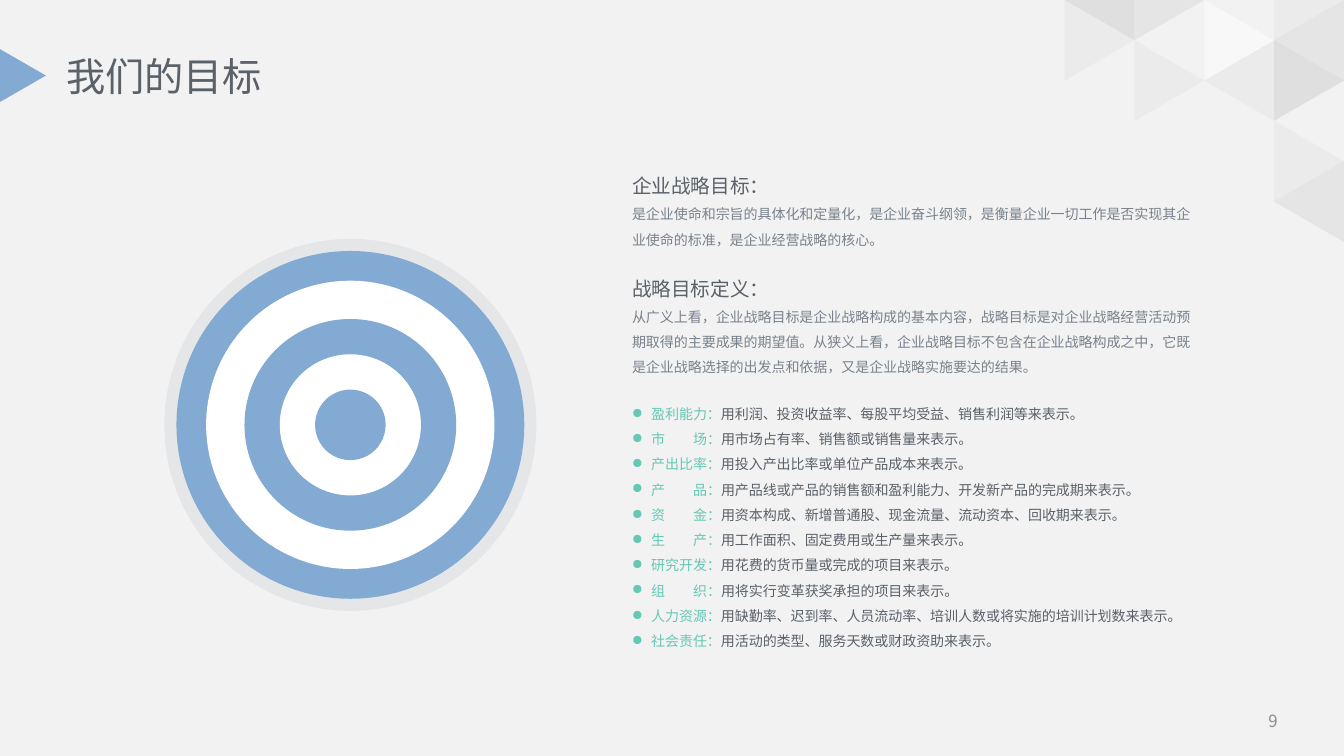
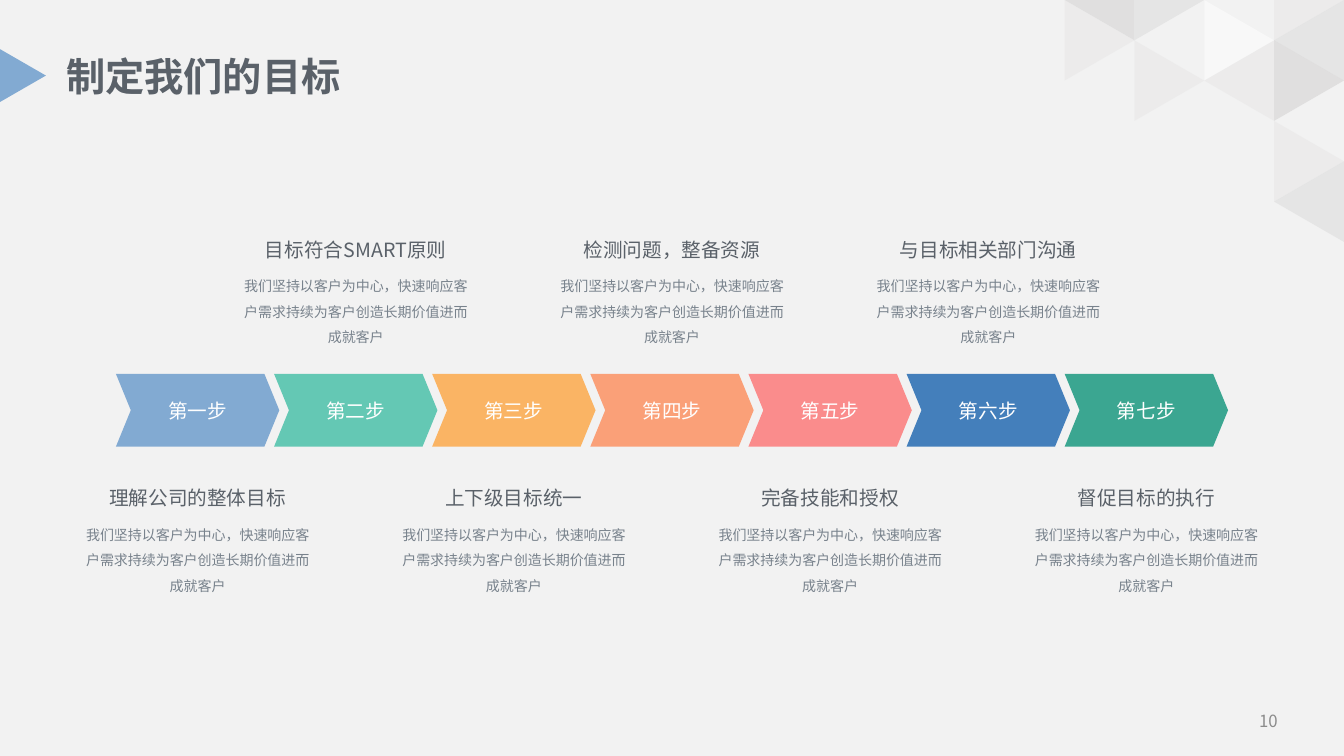
import math
from dataclasses import dataclass

import lxml.etree
import pptx
import pptx.dml.color
import pptx.enum.shapes
import pptx.enum.text
import pptx.oxml.ns
import pptx.util

Inches = pptx.util.Inches
Shape = pptx.enum.shapes.MSO_SHAPE
Align = pptx.enum.text.PP_ALIGN
Anchor = pptx.enum.text.MSO_ANCHOR
qn = pptx.oxml.ns.qn


@dataclass(frozen=True)
class Theme:
    """Colours, font and type sizes of the presentation."""
    font: str = "Noto Sans CJK SC"
    background: str = "F2F2F2"
    dark: str = "5A6169"
    body: str = "78828C"
    muted: str = "8C8C8C"
    white: str = "FFFFFF"
    halo: str = "E4E6E8"
    blue: str = "82AAD2"
    green: str = "64C8B4"
    steps: tuple = ("82AAD2", "64C8B4", "FAB464", "FAA078", "FA8C8C", "447FBB", "3BA691")
    title_size: int = 28
    heading_size: int = 14
    page_size: int = 12
    body_size: int = 10


@dataclass(frozen=True)
class Box:
    """A rectangle in inches."""
    left: float
    top: float
    width: float
    height: float

    def lengths(self):
        """Return the four sides as lengths."""
        return [Inches(side) for side in (self.left, self.top, self.width, self.height)]


THEME = Theme()
SLIDE_WIDTH, SLIDE_HEIGHT = 13.33, 7.5

MOSAIC = (
    (0, 0, "D0CECE"), (1, 0, "D9D9D9"), (2, 0, "F2F2F2"), (3, 0, "E7E6E6"),
    (0, 1, "E7E6E6"), (1, 1, "F2F2F2"), (2, 1, "FFFFFF"), (3, 1, "D9D9D9"),
    (1, 2, "E7E6E6"), (2, 2, "E7E6E6"), (3, 2, "D0CECE"),
    (2, 3, "F2F2F2"), (3, 3, "F2F2F2"),
    (2, 4, "F2F2F2"), (3, 4, "E7E6E6"), (3, 5, "D9D9D9"),
)

RINGS = (
    (3.69, THEME.halo), (3.45, THEME.blue), (2.86, THEME.white),
    (2.1, THEME.blue), (1.4, THEME.white), (0.7, THEME.blue),
)

DEFINITIONS = (
    ("企业战略目标：",
     "是企业使命和宗旨的具体化和定量化，是企业奋斗纲领，是衡量企业一切工作是否实现其企业使命的标准，是企业经营战略的核心。"),
    ("战略目标定义：",
     "从广义上看，企业战略目标是企业战略构成的基本内容，战略目标是对企业战略经营活动预期取得的主要成果的期望值。"
     "从狭义上看，企业战略目标不包含在企业战略构成之中，它既是企业战略选择的出发点和依据，又是企业战略实施要达的结果。"),
)

MEASURES = (
    ("盈利能力", "用利润、投资收益率、每股平均受益、销售利润等来表示。"),
    ("市场", "用市场占有率、销售额或销售量来表示。"),
    ("产出比率", "用投入产出比率或单位产品成本来表示。"),
    ("产品", "用产品线或产品的销售额和盈利能力、开发新产品的完成期来表示。"),
    ("资金", "用资本构成、新增普通股、现金流量、流动资本、回收期来表示。"),
    ("生产", "用工作面积、固定费用或生产量来表示。"),
    ("研究开发", "用花费的货币量或完成的项目来表示。"),
    ("组织", "用将实行变革获奖承担的项目来表示。"),
    ("人力资源", "用缺勤率、迟到率、人员流动率、培训人数或将实施的培训计划数来表示。"),
    ("社会责任", "用活动的类型、服务天数或财政资助来表示。"),
)

STEPS = (
    ("第一步", "理解公司的整体目标"),
    ("第二步", "目标符合SMART原则"),
    ("第三步", "上下级目标统一"),
    ("第四步", "检测问题，整备资源"),
    ("第五步", "完备技能和授权"),
    ("第六步", "与目标相关部门沟通"),
    ("第七步", "督促目标的执行"),
)
STEP_NOTE = "我们坚持以客户为中心，快速响应客户需求持续为客户创造长期价值进而成就客户"


def write(paragraph, text, size=THEME.body_size, color=THEME.body, bold=False, spacing=0):
    """Add a formatted run to a paragraph."""
    run = paragraph.add_run()
    run.text = text
    run.font.size = pptx.util.Pt(size)
    run.font.bold = bold
    run.font.name = THEME.font
    run.font.color.rgb = pptx.dml.color.RGBColor.from_string(color)
    properties = run.font._element
    properties.set("lang", "zh-CN")
    if spacing:
        properties.set("spc", str(spacing * 100))
    east_asian = lxml.etree.SubElement(properties, qn("a:ea"))
    east_asian.set("typeface", THEME.font)


def next_paragraph(frame, align=Align.LEFT, line_spacing=None, after=0):
    """Return a fresh paragraph, using the empty first one if it is free."""
    first = frame.paragraphs[0]
    paragraph = frame.add_paragraph() if first.runs else first
    paragraph.alignment = align
    paragraph.line_spacing = line_spacing
    paragraph.space_after = pptx.util.Pt(after)
    return paragraph


def add_text_frame(slide, box, anchor=Anchor.TOP):
    """Add a wrapping text box and return its text frame."""
    frame = slide.shapes.add_textbox(*box.lengths()).text_frame
    frame.word_wrap = True
    frame.vertical_anchor = anchor
    return frame


def add_filled(shapes, kind, box, color, rotation=0, opacity=100):
    """Add a flat preset shape without outline."""
    shape = shapes.add_shape(kind, *box.lengths())
    shape.shadow.inherit = False
    shape.line.fill.background()
    shape.fill.solid()
    shape.fill.fore_color.rgb = pptx.dml.color.RGBColor.from_string(color)
    shape.rotation = rotation
    if opacity < 100:
        fill_color = shape._element.spPr.find(qn("a:solidFill")).find(qn("a:srgbClr"))
        alpha = lxml.etree.SubElement(fill_color, qn("a:alpha"))
        alpha.set("val", str(opacity * 1000))
    return shape


def add_mosaic(slide, right, top, side):
    """Tile translucent triangles in the corner that ends at right and top."""
    depth = side * math.sqrt(3) / 2
    columns = 1 + max(column for column, row, color in MOSAIC)
    for column, row, color in MOSAIC:
        center_x = right - (columns - column - 0.5) * depth
        center_y = top + row * side / 2
        box = Box(center_x - side / 2, center_y - depth / 2, side, depth)
        rotation = 90 if (column + row) % 2 else 270
        add_filled(slide.shapes, Shape.ISOSCELES_TRIANGLE, box, color, rotation, 50)


def add_base_slide(presentation, title, page, bold=False):
    """Add a slide with the shared background, corner, title and page number."""
    slide = presentation.slides.add_slide(presentation.slide_layouts[6])
    slide.background.fill.solid()
    slide.background.fill.fore_color.rgb = pptx.dml.color.RGBColor.from_string(THEME.background)
    add_mosaic(slide, SLIDE_WIDTH, 0, 0.8)
    add_filled(slide.shapes, Shape.ISOSCELES_TRIANGLE, Box(-0.04, 0.52, 0.53, 0.46), THEME.blue, 90)
    title_frame = add_text_frame(slide, Box(0.56, 0.4, 12.2, 0.7), Anchor.MIDDLE)
    write(next_paragraph(title_frame), title, size=THEME.title_size, color=THEME.dark, bold=bold)
    page_frame = add_text_frame(slide, Box(12.25, 6.95, 0.52, 0.4), Anchor.MIDDLE)
    write(next_paragraph(page_frame, Align.RIGHT), str(page), size=THEME.page_size, color=THEME.muted)
    return slide


def add_target(slide, box):
    """Draw concentric rings centred in the box."""
    group = slide.shapes.add_group_shape()
    for diameter, color in RINGS:
        left = box.left + (box.width - diameter) / 2
        top = box.top + (box.height - diameter) / 2
        add_filled(group.shapes, Shape.OVAL, Box(left, top, diameter, diameter), color)


def add_definitions(slide, box):
    """Write the headed definitions."""
    frame = add_text_frame(slide, box)
    for heading, body in DEFINITIONS:
        write(next_paragraph(frame, line_spacing=1.5), heading, size=THEME.heading_size, color=THEME.dark)
        write(next_paragraph(frame, line_spacing=1.5, after=12), body)


def add_measures(slide, box):
    """Write the bulleted measures, spreading short labels to four characters."""
    frame = add_text_frame(slide, box)
    indent = Inches(0.19)
    for label, body in MEASURES:
        paragraph = next_paragraph(frame, line_spacing=1.5)
        properties = paragraph._p.get_or_add_pPr()
        properties.set("marL", str(indent))
        properties.set("indent", str(-indent))
        bullet = lxml.etree.SubElement(properties, qn("a:buChar"))
        bullet.set("char", "●")
        missing = 4 - len(label)
        write(paragraph, label[0], color=THEME.green, spacing=missing * THEME.body_size)
        write(paragraph, label[1:] + "：", color=THEME.green)
        write(paragraph, body, color=THEME.dark)


def add_step(slide, box, label, color):
    """Draw one labelled chevron."""
    chevron = add_filled(slide.shapes, Shape.CHEVRON, box, color)
    chevron.adjustments[0] = 0.205
    chevron.text_frame.vertical_anchor = Anchor.MIDDLE
    paragraph = next_paragraph(chevron.text_frame, Align.CENTER)
    write(paragraph, label, size=THEME.heading_size, color=THEME.white)


def add_caption(slide, box, heading):
    """Write a centred heading with its note."""
    frame = add_text_frame(slide, box)
    write(next_paragraph(frame, Align.CENTER, 1.5, 6), heading, size=THEME.heading_size, color=THEME.dark)
    write(next_paragraph(frame, Align.CENTER, 1.5, 6), STEP_NOTE)


def add_process(slide, box):
    """Lay chevrons across the box with captions alternating below and above."""
    step_width, caption_width = 1.62, 2.41
    pitch = (box.width - step_width) / (len(STEPS) - 1)
    for index, ((label, heading), color) in enumerate(zip(STEPS, THEME.steps)):
        left = box.left + index * pitch
        add_step(slide, Box(left, box.top, step_width, box.height), label, color)
        caption_left = left + (step_width - caption_width) / 2
        caption_top = box.top + (-1.52 if index % 2 else 0.95)
        add_caption(slide, Box(caption_left, caption_top, caption_width, 1.3), heading)


def build_goal_slide(presentation):
    """Build the slide that defines the goals."""
    slide = add_base_slide(presentation, "我们的目标", 9)
    add_target(slide, Box(1.63, 2.37, 3.69, 3.69))
    add_definitions(slide, Box(6.17, 1.56, 5.81, 2.24))
    add_measures(slide, Box(6.17, 3.89, 5.9, 2.6))


def build_process_slide(presentation):
    """Build the slide with the seven steps."""
    slide = add_base_slide(presentation, "制定我们的目标", 10, bold=True)
    add_process(slide, Box(1.15, 3.71, 11.03, 0.72))


def main():
    """Build and save the presentation."""
    presentation = pptx.Presentation()
    presentation.slide_width = Inches(SLIDE_WIDTH)
    presentation.slide_height = Inches(SLIDE_HEIGHT)
    build_goal_slide(presentation)
    build_process_slide(presentation)
    presentation.save("out.pptx")


if __name__ == "__main__":
    main()
